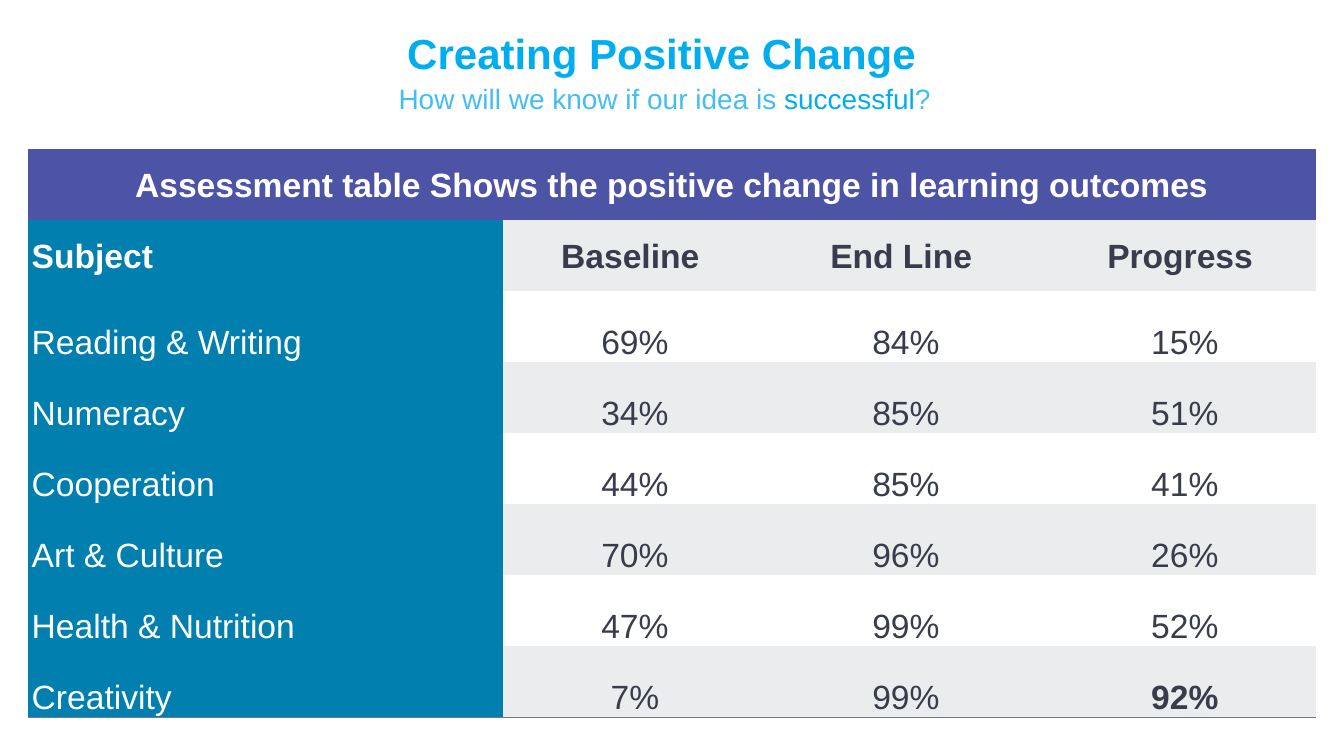
from dataclasses import dataclass

from lxml import etree
from pptx import Presentation
from pptx.dml.color import RGBColor
from pptx.enum import text
from pptx.oxml import ns
from pptx.util import Inches, Pt


@dataclass(frozen=True)
class Theme:
    font: str = "Arial"
    title_size: int = 60
    subtitle_size: int = 40
    table_size: int = 48
    cyan: str = "00AEEF"
    sky: str = "42BEF3"
    purple: str = "4D54A6"
    teal: str = "0180B0"
    grey: str = "EBECEE"
    white: str = "FFFFFF"
    ink: str = "393C4A"
    rule: str = "747993"


THEME = Theme()
NO_GRID_STYLE = "{2D5ABB26-0587-4C30-8999-92F81FD0307C}"
CENTER, LEFT = text.PP_ALIGN.CENTER, text.PP_ALIGN.LEFT
MIDDLE, BOTTOM = text.MSO_ANCHOR.MIDDLE, text.MSO_ANCHOR.BOTTOM

COLUMN_WIDTHS = (9.41, 5.25, 5.5, 5.38)
ROW_HEIGHT = 1.41
CAPTION = "Assessment table Shows the positive change in learning outcomes"
ROWS = (
    ("Subject", "Baseline ", "End Line ", "Progress"),
    ("Reading & Writing", "69%", "84%", " 15%"),
    ("Numeracy", "34%", "85%", " 51%"),
    ("Cooperation", "44%", "85%", " 41%"),
    ("Art & Culture", "70%", "96%", " 26%"),
    ("Health & Nutrition", "47%", "99%", " 52%"),
    ("Creativity", "7%", "99%", " 92%"),
)


def add_run(p, words, size, color, bold=False):
    r = p.add_run()
    r.text = words
    r.font.name = THEME.font
    r.font.size = Pt(size)
    r.font.bold = bold
    r.font.color.rgb = RGBColor.from_string(color)


def set_title(s, words):
    sp = s.shapes.title
    sp.left, sp.top = Inches(6.2), Inches(0.48)
    sp.width, sp.height = Inches(13.85), Inches(1.11)
    tf = sp.text_frame
    tf.vertical_anchor = BOTTOM
    tf.auto_size = text.MSO_AUTO_SIZE.SHAPE_TO_FIT_TEXT
    p = tf.paragraphs[0]
    p.alignment = CENTER
    add_run(p, words, THEME.title_size, THEME.cyan, bold=True)


def add_subtitle(s, runs):
    sp = s.shapes.add_textbox(Inches(2.66), Inches(1.57), Inches(21.04), Inches(0.77))
    tf = sp.text_frame
    tf.word_wrap = True
    tf.auto_size = text.MSO_AUTO_SIZE.SHAPE_TO_FIT_TEXT
    p = tf.paragraphs[0]
    p.alignment = CENTER
    p.space_before = Pt(6)
    for words, color in runs:
        add_run(p, words, THEME.subtitle_size, color)


def fill_cell(cell, words, fill, color, align=CENTER, anchor=BOTTOM, bold=False):
    cell.margin_left = cell.margin_right = Inches(0.07)
    cell.margin_top = cell.margin_bottom = 0
    cell.vertical_anchor = anchor
    cell.fill.solid()
    cell.fill.fore_color.rgb = RGBColor.from_string(fill)
    p = cell.text_frame.paragraphs[0]
    p.alignment = align
    p.line_spacing = 1.07
    add_run(p, words, THEME.table_size, color, bold)


def underline_cell(cell, color, width):
    """Draw the bottom border; it must precede the fill in the cell properties."""
    line = etree.Element(ns.qn("a:lnB"), w=str(Pt(width)))
    solid = etree.SubElement(line, ns.qn("a:solidFill"))
    etree.SubElement(solid, ns.qn("a:srgbClr"), val=color)
    cell._tc.get_or_add_tcPr().insert(0, line)


def add_assessment_table(s):
    row_count = len(ROWS) + 1
    frame = s.shapes.add_table(
        row_count, len(COLUMN_WIDTHS), Inches(0.56), Inches(2.95),
        Inches(sum(COLUMN_WIDTHS)), Inches(ROW_HEIGHT * row_count))
    table = frame.table
    table.horz_banding = table.first_row = False
    table._tbl.tblPr.find(ns.qn("a:tableStyleId")).text = NO_GRID_STYLE
    for column, width in zip(table.columns, COLUMN_WIDTHS):
        column.width = Inches(width)
    for row in table.rows:
        row.height = Inches(ROW_HEIGHT)

    caption = table.cell(0, 0)
    caption.merge(table.cell(0, len(COLUMN_WIDTHS) - 1))
    fill_cell(caption, CAPTION, THEME.purple, THEME.white, anchor=MIDDLE, bold=True)

    for i, values in enumerate(ROWS, start=1):
        is_header, is_last = i == 1, i == len(ROWS)
        band = THEME.grey if i % 2 else THEME.white
        for j, words in enumerate(values):
            cell = table.cell(i, j)
            is_subject = j == 0
            is_best = is_last and j == len(values) - 1
            fill_cell(
                cell, words,
                fill=THEME.teal if is_subject else band,
                color=THEME.white if is_subject else THEME.ink,
                align=LEFT if is_subject else CENTER,
                anchor=MIDDLE if is_header else BOTTOM,
                bold=is_header or is_best)
            if is_last:
                underline_cell(cell, THEME.rule, 2)


def main():
    prs = Presentation()
    prs.slide_width, prs.slide_height = Inches(26.66), Inches(15)
    s = prs.slides.add_slide(prs.slide_layouts[5])
    set_title(s, "Creating Positive Change")
    add_subtitle(s, (
        ("How will we know if our idea is ", THEME.sky),
        ("successful", THEME.cyan),
        ("?", THEME.sky)))
    add_assessment_table(s)
    prs.save("out.pptx")


if __name__ == "__main__":
    main()
